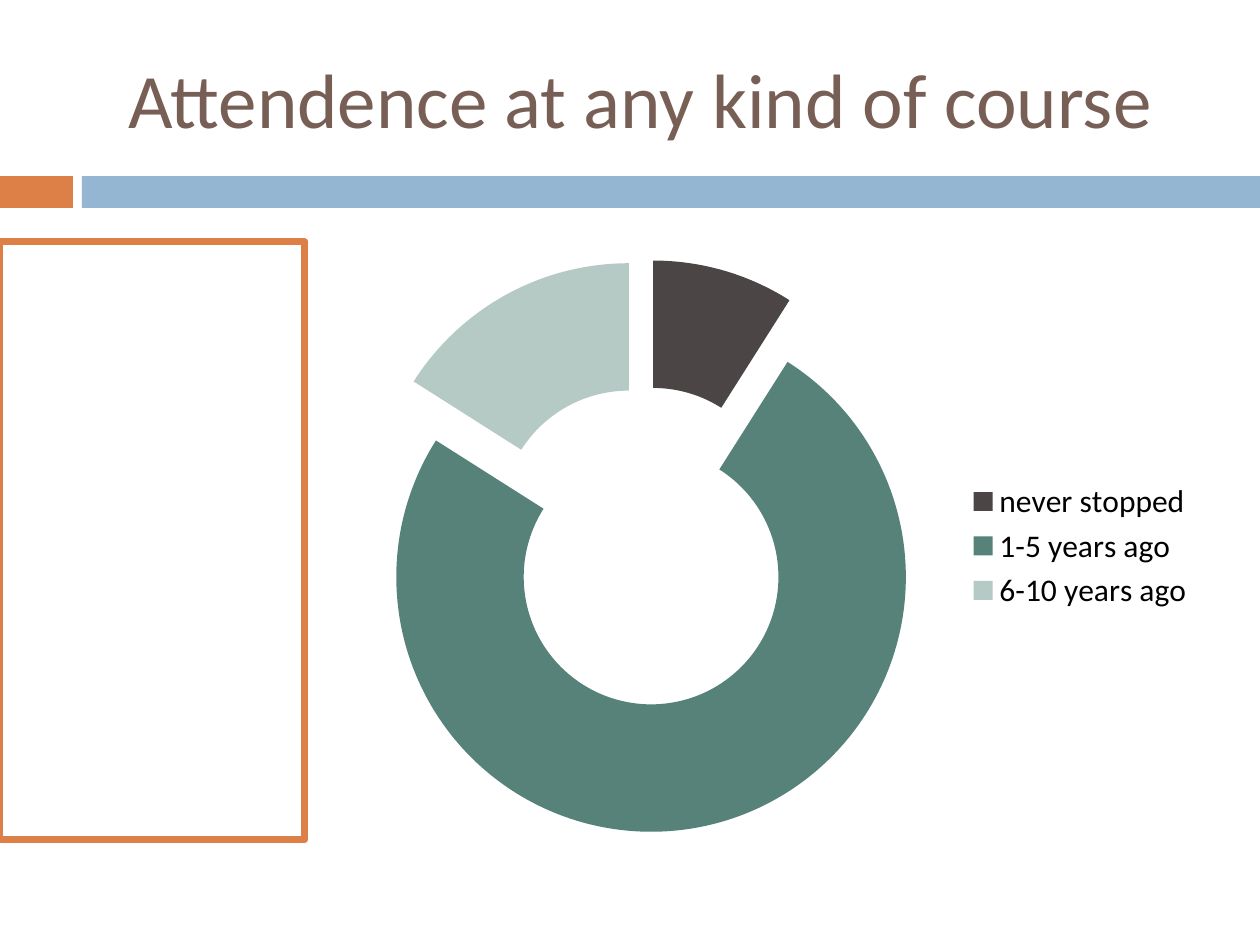
from dataclasses import dataclass

from lxml import etree
from pptx import Presentation
from pptx import util as u
from pptx.chart.data import CategoryChartData
from pptx.dml.color import RGBColor
from pptx.enum import chart as charts, shapes, text
from pptx.oxml import ns

PX = u.Inches(1) / 126


@dataclass(frozen=True)
class Theme:
    """Colours, font and type sizes of the slide."""
    font: str = "Calibri"
    title_size: int = 44
    legend_size: int = 18
    title: str = "775F55"
    accent: str = "DD8047"
    band: str = "94B6D2"
    ink: str = "000000"
    slices: tuple = ("4C4545", "578279", "B6CAC5")


THEME = Theme()
ATTENDANCE = {"never stopped": 9, "1-5 years ago": 75, "6-10 years ago": 16}


def px(*lengths):
    """Turn pixel lengths into EMU."""
    return [u.Emu(round(length * PX)) for length in lengths]


def paint(target, colour):
    """Give a fill or a font one solid colour."""
    if hasattr(target, "solid"):
        target.solid()
        target.fore_color.rgb = RGBColor.from_string(colour)
    else:
        target.color.rgb = RGBColor.from_string(colour)


def style_font(font, size, colour):
    """Set typeface, size and colour of a font."""
    font.name = THEME.font
    font.size = u.Pt(size)
    paint(font, colour)


def add_bar(slide, box, colour):
    """Draw a filled bar without outline."""
    bar = slide.shapes.add_shape(shapes.MSO_SHAPE.RECTANGLE, *px(*box))
    bar.shadow.inherit = False
    paint(bar.fill, colour)
    bar.line.fill.background()


def add_frame(slide, box, colour, weight):
    """Draw an empty outlined panel."""
    frame = slide.shapes.add_shape(shapes.MSO_SHAPE.RECTANGLE, *px(*box))
    frame.shadow.inherit = False
    frame.fill.background()
    paint(frame.line.fill, colour)
    frame.line.width = u.Pt(weight)


def add_title(slide, box, wording):
    """Write the centred slide title."""
    frame = slide.shapes.add_textbox(*px(*box)).text_frame
    frame.word_wrap = True
    frame.vertical_anchor = text.MSO_ANCHOR.MIDDLE
    heading = frame.paragraphs[0]
    heading.text = wording
    heading.alignment = text.PP_ALIGN.CENTER
    style_font(heading.font, THEME.title_size, THEME.title)


def add_doughnut(slide, box, shares, explosion):
    """Chart the shares as an exploded doughnut with a legend."""
    data = CategoryChartData()
    data.categories = list(shares)
    data.add_series("Series 1", list(shares.values()))
    doughnut = slide.shapes.add_chart(
        charts.XL_CHART_TYPE.DOUGHNUT, *px(*box), data).chart
    style_font(doughnut.font, THEME.legend_size, THEME.ink)
    doughnut.has_title = False
    doughnut.has_legend = True
    doughnut.legend.position = charts.XL_LEGEND_POSITION.RIGHT
    doughnut.legend.include_in_layout = False

    series = doughnut.plots[0].series[0]
    for index, colour in enumerate(THEME.slices):
        share = series.points[index].format
        paint(share.fill, colour)
        share.line.fill.background()
    offset = etree.Element(ns.qn("c:explosion"), val=str(explosion))
    for old in series._element.findall(ns.qn("c:explosion")):
        series._element.remove(old)
    series._element.find(ns.qn("c:dPt")).addprevious(offset)


def main():
    """Build and save the slide."""
    deck = Presentation()
    deck.slide_width, deck.slide_height = px(1260, 945)
    slide = deck.slides.add_slide(deck.slide_layouts[6])
    add_bar(slide, (0, 176, 73, 32), THEME.accent)
    add_bar(slide, (82, 176, 1178, 32), THEME.band)
    add_title(slide, (84, 38, 1113, 120), "Attendence at any kind of course")
    add_frame(slide, (0, 242, 305, 598), THEME.accent, 4)
    add_doughnut(slide, (325, 242, 882, 608), ATTENDANCE, 25)
    deck.save("out.pptx")


if __name__ == "__main__":
    main()
